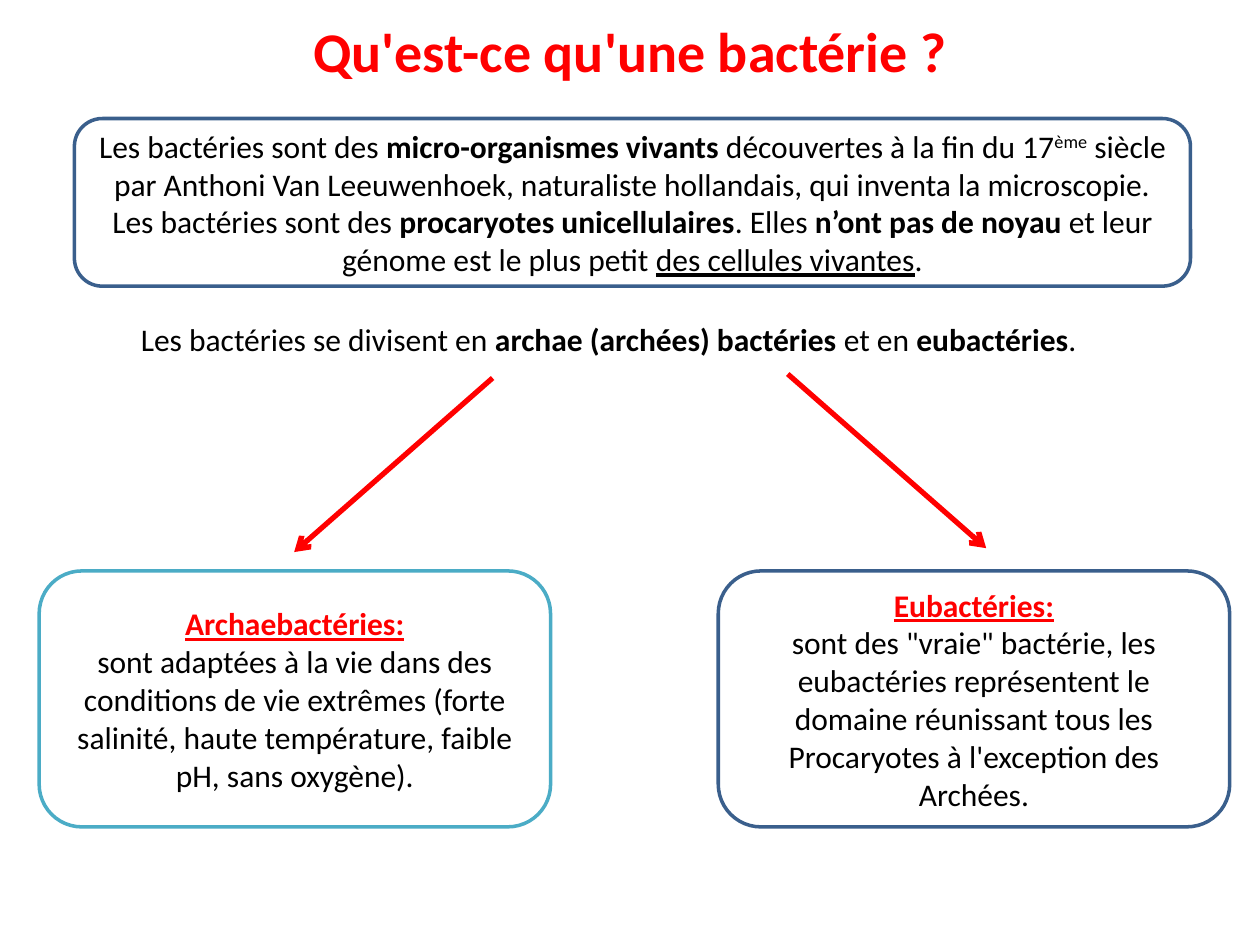
from lxml.etree import SubElement
from pptx import Presentation
from pptx.dml.color import RGBColor
from pptx.enum.shapes import MSO_CONNECTOR, MSO_SHAPE
from pptx.enum.text import MSO_ANCHOR, MSO_AUTO_SIZE, PP_ALIGN
from pptx.oxml.ns import qn
from pptx.util import Cm, Pt

RED = RGBColor(0xFF, 0x00, 0x00)
BLACK = RGBColor(0x00, 0x00, 0x00)
WHITE = RGBColor(0xFF, 0xFF, 0xFF)
NAVY = RGBColor(0x3A, 0x5F, 0x8C)
TEAL = RGBColor(0x4B, 0xAC, 0xC6)

BODY = {"name": "Calibri", "size": Pt(18), "bold": False}
BOLD = {"bold": True}
UNDERLINED = {"underline": True}
HEADING = {"bold": True, "underline": True, "color": RED}
TITLE = {"size": Pt(32), "bold": True, "color": RED}
SUPERSCRIPT = {"baseline": "30000"}

title_text = [[("Qu'est-ce qu'une bactérie ?", TITLE)]]
definition = [[
    ("Les bactéries sont des ", {}),
    ("micro-organismes vivants", BOLD),
    (" découvertes à la fin du 17", {}),
    ("ème", SUPERSCRIPT),
    (" siècle par Anthoni Van Leeuwenhoek, naturaliste hollandais, "
     "qui inventa la microscopie. Les bactéries sont des ", {}),
    ("procaryotes unicellulaires", BOLD),
    (". Elles ", {}),
    ("n’ont pas de noyau ", BOLD),
    ("et leur génome est le plus petit ", {}),
    ("des cellules vivantes", UNDERLINED),
    (".", {}),
]]
division = [[
    ("Les bactéries se divisent en ", {}),
    ("archae (archées) bactéries ", BOLD),
    ("et en ", {}),
    ("eubactéries", BOLD),
    (".", {}),
]]
archaebacteria = [
    [("Archaebactéries:", HEADING)],
    [("sont adaptées à la vie dans des conditions de vie extrêmes (forte "
      "salinité, haute température, faible pH, sans oxygène).", {})],
]
eubacteria = [
    [("Eubactéries:", HEADING)],
    [('sont des "vraie" bactérie, les eubactéries représentent le domaine '
      "réunissant tous les Procaryotes à l'exception des Archées.", {})],
]

GROUP_TOP, GROUP_WIDTH, GROUP_HEIGHT = 11.51, 10.31, 5.16
boxes = [
    (definition, (1.5, 2.39, 22.5, 3.38), NAVY, None),
    (archaebacteria, (0.79, GROUP_TOP, GROUP_WIDTH, GROUP_HEIGHT), TEAL, WHITE),
    (eubacteria, (14.48, GROUP_TOP, GROUP_WIDTH, GROUP_HEIGHT), NAVY, None),
]
ARROW_RUN, ARROW_DROP = 4, 3.51
arrows = [(9.93, 7.62, -ARROW_RUN), (15.88, 7.54, ARROW_RUN)]


def write(frame, paragraphs, align=PP_ALIGN.CENTER):
    for index, pieces in enumerate(paragraphs):
        paragraph = frame.paragraphs[0] if index == 0 else frame.add_paragraph()
        paragraph.alignment = align
        for text, changes in pieces:
            run = paragraph.add_run()
            run.text = text
            style = {"color": BLACK, **BODY, **changes}
            run.font.color.rgb = style.pop("color")
            if "baseline" in style:
                run.font._element.set("baseline", style.pop("baseline"))
            for attribute, value in style.items():
                setattr(run.font, attribute, value)


def add_box(slide, paragraphs, place, outline, fill):
    box = slide.shapes.add_shape(MSO_SHAPE.ROUNDED_RECTANGLE, *map(Cm, place))
    box.shadow.inherit = False
    if fill is None:
        box.fill.background()
    else:
        box.fill.solid()
        box.fill.fore_color.rgb = fill
    box.line.color.rgb = outline
    box.line.width = Pt(2)
    box.text_frame.word_wrap = True
    box.text_frame.vertical_anchor = MSO_ANCHOR.MIDDLE
    write(box.text_frame, paragraphs)


def add_arrow(slide, left, top, run):
    ends = (left, top, left + run, top + ARROW_DROP)
    arrow = slide.shapes.add_connector(MSO_CONNECTOR.STRAIGHT, *map(Cm, ends))
    arrow.line.color.rgb = RED
    arrow.line.width = Pt(3)
    SubElement(arrow.line._get_or_add_ln(), qn("a:tailEnd"), type="arrow")
    SubElement(arrow._element.spPr, qn("a:effectLst"))


def main():
    deck = Presentation()
    deck.slide_width, deck.slide_height = Cm(25.4), Cm(19.05)
    slide = deck.slides.add_slide(deck.slide_layouts[5])

    title = slide.shapes.title
    title.left, title.top, title.width, title.height = map(Cm, (2.29, 0.2, 20.83, 1.63))
    title.text_frame.auto_size = MSO_AUTO_SIZE.NONE
    title.text_frame.vertical_anchor = MSO_ANCHOR.TOP
    write(title.text_frame, title_text)

    for box in boxes:
        add_box(slide, *box)
    for arrow in arrows:
        add_arrow(slide, *arrow)

    sentence = slide.shapes.add_textbox(*map(Cm, (2.59, 6.32, 19.56, 1.02)))
    sentence.text_frame.word_wrap = False
    write(sentence.text_frame, division, PP_ALIGN.LEFT)

    deck.save("out.pptx")


if __name__ == "__main__":
    main()
